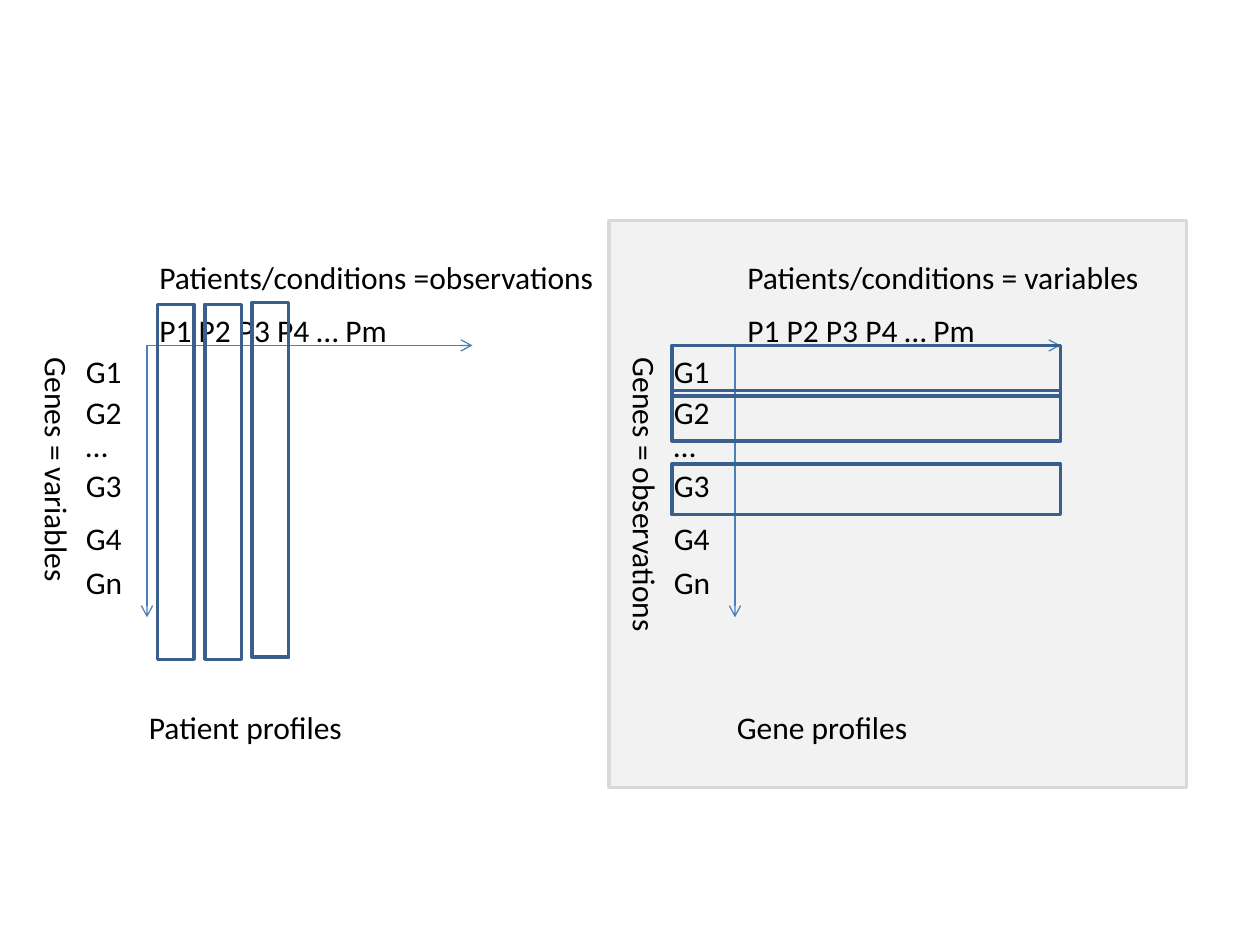
from dataclasses import dataclass

from lxml.etree import SubElement
from pptx import Presentation
from pptx.dml.color import RGBColor
from pptx.enum.shapes import MSO_CONNECTOR as Connector, MSO_SHAPE as Shape
from pptx.oxml.ns import qn
from pptx.util import Inches, Pt


@dataclass(frozen=True)
class Theme:
    font: str = "Calibri"
    text_size: float = 18
    text: str = "000000"
    panel_fill: str = "F2F2F2"
    panel_line: str = "D9D9D9"
    profile_line: str = "3A5F8C"
    axis: str = "4B7EBC"
    box_width: float = 2
    axis_width: float = 0.75


THEME = Theme()
UNIT = 1 / 12  # grid step in inches: 120 columns by 90 rows
HALF_SHIFT = 56  # columns from the left matrix to the right one
AXIS_COLUMN, AXIS_ROW = 14, 32.9
LABEL_HEIGHT = 4.8
GENE_ROWS = {"G1": 32.9, "G2": 36.8, "…": 40, "G3": 43.8, "G4": 48.8, "Gn": 53}


def grid(*values):
    return [Inches(value * UNIT) for value in values]


def color(code):
    return RGBColor.from_string(code)


def add_text(slide, text, column, row, width, height=LABEL_HEIGHT, *,
             rotation=0, size=THEME.text_size, text_color=THEME.text):
    shape = slide.shapes.add_textbox(*grid(column, row, width, height))
    shape.rotation = rotation
    shape.text_frame.word_wrap = True
    run = shape.text_frame.paragraphs[0].add_run()
    run.text = text
    run.font.name = THEME.font
    run.font.size = Pt(size)
    run.font.color.rgb = color(text_color)


def add_box(slide, column, row, width, height, line=THEME.profile_line, fill=None):
    shape = slide.shapes.add_shape(Shape.RECTANGLE, *grid(column, row, width, height))
    shape.shadow.inherit = False
    if fill:
        shape.fill.solid()
        shape.fill.fore_color.rgb = color(fill)
    else:
        shape.fill.background()
    shape.line.color.rgb = color(line)
    shape.line.width = Pt(THEME.box_width)


def add_axis(slide, start, end):
    axis = slide.shapes.add_connector(Connector.STRAIGHT, *grid(*start, *end))
    axis.line.color.rgb = color(THEME.axis)
    axis.line.width = Pt(THEME.axis_width)
    SubElement(axis.line._get_or_add_ln(), qn("a:tailEnd"), type="arrow")
    SubElement(axis._element.spPr, qn("a:effectLst"))


def add_vertical_label(slide, text, center, top, length):
    # The box turns about its centre, so its unrotated frame is offset
    column = center - length / 2
    row = top + (length - LABEL_HEIGHT) / 2
    add_text(slide, text, column, row, length, rotation=90)


def add_matrix(slide, shift, patients, genes, genes_length, caption):
    left = AXIS_COLUMN + shift
    origin = (left, AXIS_ROW)

    # Axes
    add_axis(slide, origin, (left, 58.8))
    add_axis(slide, origin, (left + 31, AXIS_ROW))

    # Column and row labels
    add_text(slide, "P1 P2 P3 P4 … Pm", left, 29, 41)
    for gene, row in GENE_ROWS.items():
        add_text(slide, gene, left - 7, row, 7)

    # Caption and axis titles
    add_text(slide, caption, left - 1, 66.8, 21.5)
    add_text(slide, patients, left, 24, 49)
    add_vertical_label(slide, genes, left - 8.55, AXIS_ROW, genes_length)


def main():
    presentation = Presentation()
    presentation.slide_width, presentation.slide_height = grid(120, 90)
    slide = presentation.slides.add_slide(presentation.slide_layouts[6])

    # Panel behind the right matrix
    add_box(slide, 58, 21, 55, 54, THEME.panel_line, THEME.panel_fill)

    # Patients as observations: profiles are columns
    add_matrix(slide, 0, "Patients/conditions =observations",
               "Genes = variables", 28, "Patient profiles")
    for index, row in enumerate((29, 29, 28.8)):
        add_box(slide, 15 + 4.5 * index, row, 3.5, 33.8)

    # Genes as observations: profiles are rows
    add_matrix(slide, HALF_SHIFT, "Patients/conditions = variables",
               "Genes = observations", 36.5, "Gene profiles")
    for row in (AXIS_ROW, 37.2, 44.2):
        add_box(slide, 64, row, 37, LABEL_HEIGHT)

    presentation.save("out.pptx")


if __name__ == "__main__":
    main()
